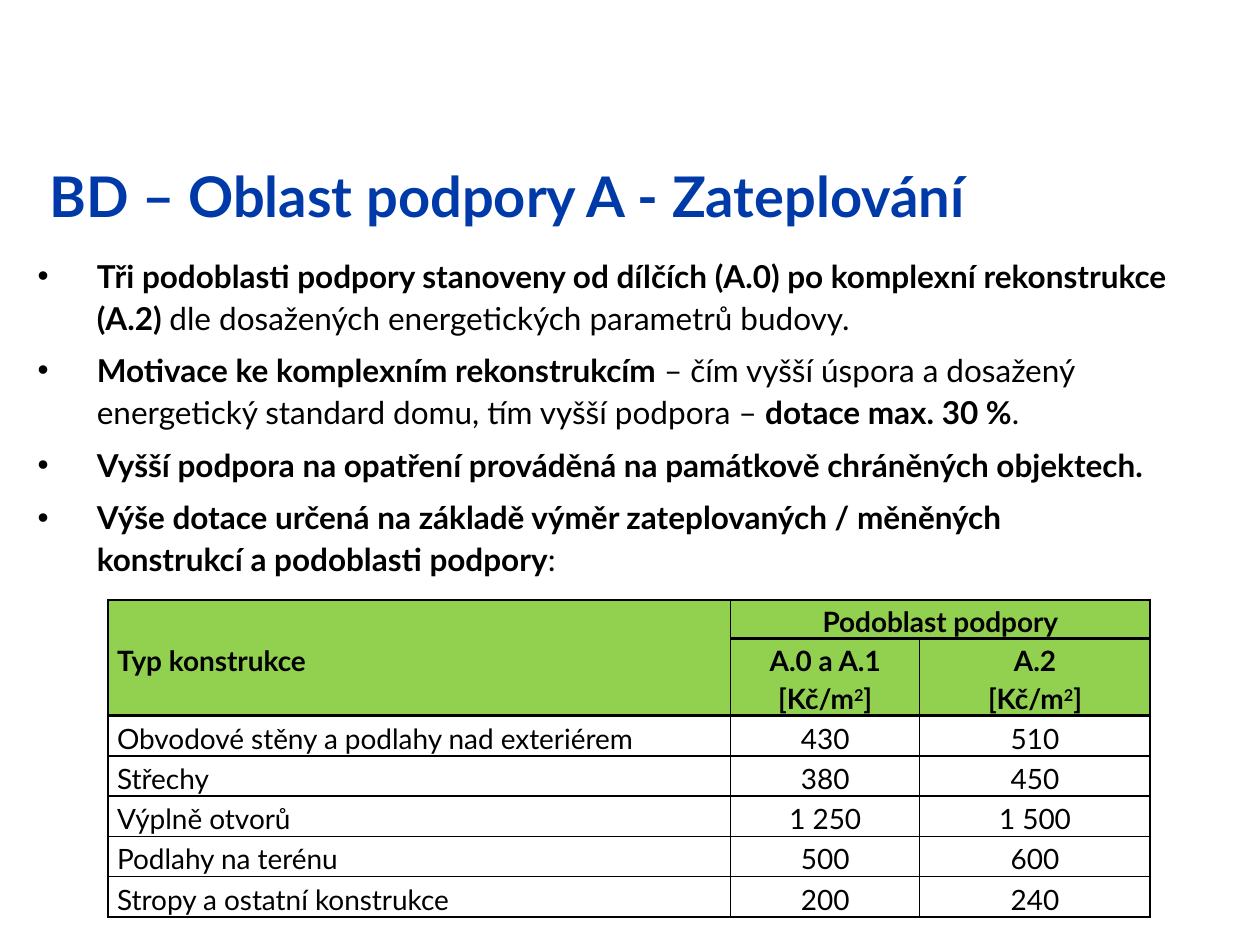
"""Build the slide on insulation subsidies for apartment buildings."""
from dataclasses import dataclass
from typing import Any

import lxml.etree
import pptx
import pptx.dml.color
import pptx.enum.text
import pptx.oxml.ns
import pptx.util

Inches = pptx.util.Inches
Pt = pptx.util.Pt
ALIGN = pptx.enum.text.PP_ALIGN
ANCHOR = pptx.enum.text.MSO_ANCHOR
AUTO_SIZE = pptx.enum.text.MSO_AUTO_SIZE


@dataclass(frozen=True)
class Theme:
    font: str = "Lato"
    title_size: float = 32
    body_size: float = 18
    table_size: float = 16
    title_color: str = "003AA9"
    text_color: str = "000000"
    header_fill: str = "92D050"
    thick_line: float = 1.5
    thin_line: float = 1


@dataclass(frozen=True)
class Piece:
    text: str
    bold: bool = False
    superscript: bool = False


@dataclass(frozen=True)
class Heading:
    row: int
    column: int
    lines: tuple[tuple[Piece, ...], ...]
    last_row: int
    last_column: int
    align: Any = ALIGN.CENTER


THEME = Theme()
UNIT = (Piece("[Kč/m", True), Piece("2", True, True), Piece("]", True))
BULLETS = (
    (Piece("Tři podoblasti podpory stanoveny od dílčích (A.0) po komplexní rekonstrukce (A.2) ", True),
     Piece("dle dosažených energetických parametrů budovy.")),
    (Piece("Motivace ke komplexním rekonstrukcím", True),
     Piece(" – čím vyšší úspora a dosažený energetický standard domu, tím vyšší podpora – "),
     Piece("dotace max. 30 %", True), Piece(".")),
    (Piece("Vyšší podpora na opatření prováděná na památkově chráněných objektech.", True),),
    (Piece("Výše dotace určená na základě výměr zateplovaných / měněných \n"
           "konstrukcí a podoblasti podpory", True), Piece(":")),
)
HEADINGS = (
    Heading(0, 0, ((Piece("Typ konstrukce", True),),), 1, 0, ALIGN.LEFT),
    Heading(0, 1, ((Piece("Podoblast podpory", True),),), 0, 2),
    Heading(1, 1, ((Piece("A.0 a A.1", True),), UNIT), 1, 1),
    Heading(1, 2, ((Piece("A.2", True),), UNIT), 1, 2),
)
RATES = (
    ("Obvodové stěny a podlahy nad exteriérem", "430", "510"),
    ("Střechy", "380", "450"),
    ("Výplně otvorů", "1 250", "1 500"),
    ("Podlahy na terénu", "500", "600"),
    ("Stropy a ostatní konstrukce", "200", "240"),
)
COLUMN_WIDTHS = (4.94, 1.5, 1.83)
ROW_HEIGHTS = (0.28, 0.57) + (0.32,) * len(RATES)
THICK_ROW_LINES = {0, 1, 2, len(ROW_HEIGHTS)}
THICK_COLUMN_LINES = {0, len(COLUMN_WIDTHS)}


def apply_format(target: Any, values: dict[str, Any]) -> None:
    """Set every named attribute on the target."""
    for name, value in values.items():
        setattr(target, name, value)


def rgb(value: str) -> Any:
    """Turn a hexadecimal string into a colour."""
    return pptx.dml.color.RGBColor.from_string(value)


def write_pieces(paragraph: Any, pieces: tuple[Piece, ...], size: float, color: str) -> None:
    """Write formatted runs, with a line break at each newline."""
    for piece in pieces:
        for index, text in enumerate(piece.text.split("\n")):
            if index:
                paragraph.add_line_break()
            run = paragraph.add_run()
            run.text = text
            apply_format(run.font, {"name": THEME.font, "size": Pt(size), "bold": piece.bold})
            run.font.color.rgb = rgb(color)
            if piece.superscript:
                run.font._element.set("baseline", "30000")


def add_bullet(paragraph: Any) -> None:
    """Give the paragraph a hanging round bullet."""
    properties = paragraph._p.get_or_add_pPr()
    properties.set("marL", str(Inches(0.47)))
    properties.set("indent", str(-Inches(0.47)))
    for tag, name, value in (("a:buFont", "typeface", "Arial"), ("a:buChar", "char", "•")):
        lxml.etree.SubElement(properties, pptx.oxml.ns.qn(tag)).set(name, value)


def add_title(slide: Any) -> None:
    """Place and fill the title placeholder."""
    title = slide.shapes.title
    apply_format(title, {"left": Inches(0.29), "top": Inches(1.23),
                         "width": Inches(9.12), "height": Inches(0.63)})
    apply_format(title.text_frame, {"word_wrap": True, "auto_size": AUTO_SIZE.NONE,
                                    "vertical_anchor": ANCHOR.TOP})
    paragraph = title.text_frame.paragraphs[0]
    paragraph.alignment = ALIGN.LEFT
    write_pieces(paragraph, (Piece("BD – Oblast podpory A - Zateplování", True),),
                 THEME.title_size, THEME.title_color)


def add_bullets(slide: Any) -> None:
    """Add the bulleted text."""
    box = slide.shapes.add_textbox(Inches(0.2), Inches(1.94), Inches(9.59), Inches(2.71))
    frame = box.text_frame
    apply_format(frame, {"word_wrap": True, "vertical_anchor": ANCHOR.MIDDLE})
    for index, pieces in enumerate(BULLETS):
        paragraph = frame.add_paragraph() if index else frame.paragraphs[0]
        add_bullet(paragraph)
        apply_format(paragraph, {"line_spacing": Pt(24), "space_before": Pt(6 if index else 0)})
        write_pieces(paragraph, pieces, THEME.body_size, THEME.text_color)


def draw_borders(cell: Any, row: int, column: int, last_row: int, last_column: int) -> None:
    """Outline a cell, with thick lines at the frame and header."""
    edges = {"a:lnL": column in THICK_COLUMN_LINES,
             "a:lnR": last_column + 1 in THICK_COLUMN_LINES,
             "a:lnT": row in THICK_ROW_LINES,
             "a:lnB": last_row + 1 in THICK_ROW_LINES}
    properties = cell._tc.get_or_add_tcPr()
    for tag, thick in edges.items():
        line = lxml.etree.SubElement(properties, pptx.oxml.ns.qn(tag))
        line.set("w", str(Pt(THEME.thick_line if thick else THEME.thin_line)))
        fill = lxml.etree.SubElement(line, pptx.oxml.ns.qn("a:solidFill"))
        color = lxml.etree.SubElement(fill, pptx.oxml.ns.qn("a:srgbClr"))
        color.set("val", THEME.text_color)


def fill_cell(table: Any, content: Heading, fill: str | None = None) -> None:
    """Write one cell, merged over its span."""
    cell = table.cell(content.row, content.column)
    last_cell = table.cell(content.last_row, content.last_column)
    if last_cell._tc is not cell._tc:
        cell.merge(last_cell)
    apply_format(cell, {"margin_left": Inches(0.07), "margin_right": Inches(0.07),
                        "margin_top": 0, "margin_bottom": 0,
                        "vertical_anchor": ANCHOR.MIDDLE})
    draw_borders(cell, content.row, content.column, content.last_row, content.last_column)
    if fill:
        cell.fill.solid()
        cell.fill.fore_color.rgb = rgb(fill)
    else:
        cell.fill.background()
    for index, pieces in enumerate(content.lines):
        paragraph = cell.text_frame.add_paragraph() if index else cell.text_frame.paragraphs[0]
        apply_format(paragraph, {"alignment": content.align, "line_spacing": 1.15})
        write_pieces(paragraph, pieces, THEME.table_size, THEME.text_color)


def add_rate_table(slide: Any) -> None:
    """Add the table of subsidy rates."""
    table = slide.shapes.add_table(
        len(ROW_HEIGHTS), len(COLUMN_WIDTHS), Inches(0.86), Inches(4.76),
        Inches(sum(COLUMN_WIDTHS)), Inches(sum(ROW_HEIGHTS))).table
    apply_format(table, {"first_row": False, "horz_banding": False})
    for column, width in zip(table.columns, COLUMN_WIDTHS):
        column.width = Inches(width)
    for row, height in zip(table.rows, ROW_HEIGHTS):
        row.height = Inches(height)
    for heading in HEADINGS:
        fill_cell(table, heading, THEME.header_fill)
    for row, rates in enumerate(RATES, start=2):
        for column, text in enumerate(rates):
            align = ALIGN.CENTER if column else ALIGN.JUSTIFY
            fill_cell(table, Heading(row, column, ((Piece(text),),), row, column, align))


def main() -> None:
    """Build and save the presentation."""
    presentation = pptx.Presentation()
    apply_format(presentation, {"slide_width": Inches(10), "slide_height": Inches(7.5)})
    slide = presentation.slides.add_slide(presentation.slide_layouts[5])
    add_bullets(slide)
    add_title(slide)
    add_rate_table(slide)
    presentation.save("out.pptx")


if __name__ == "__main__":
    main()
